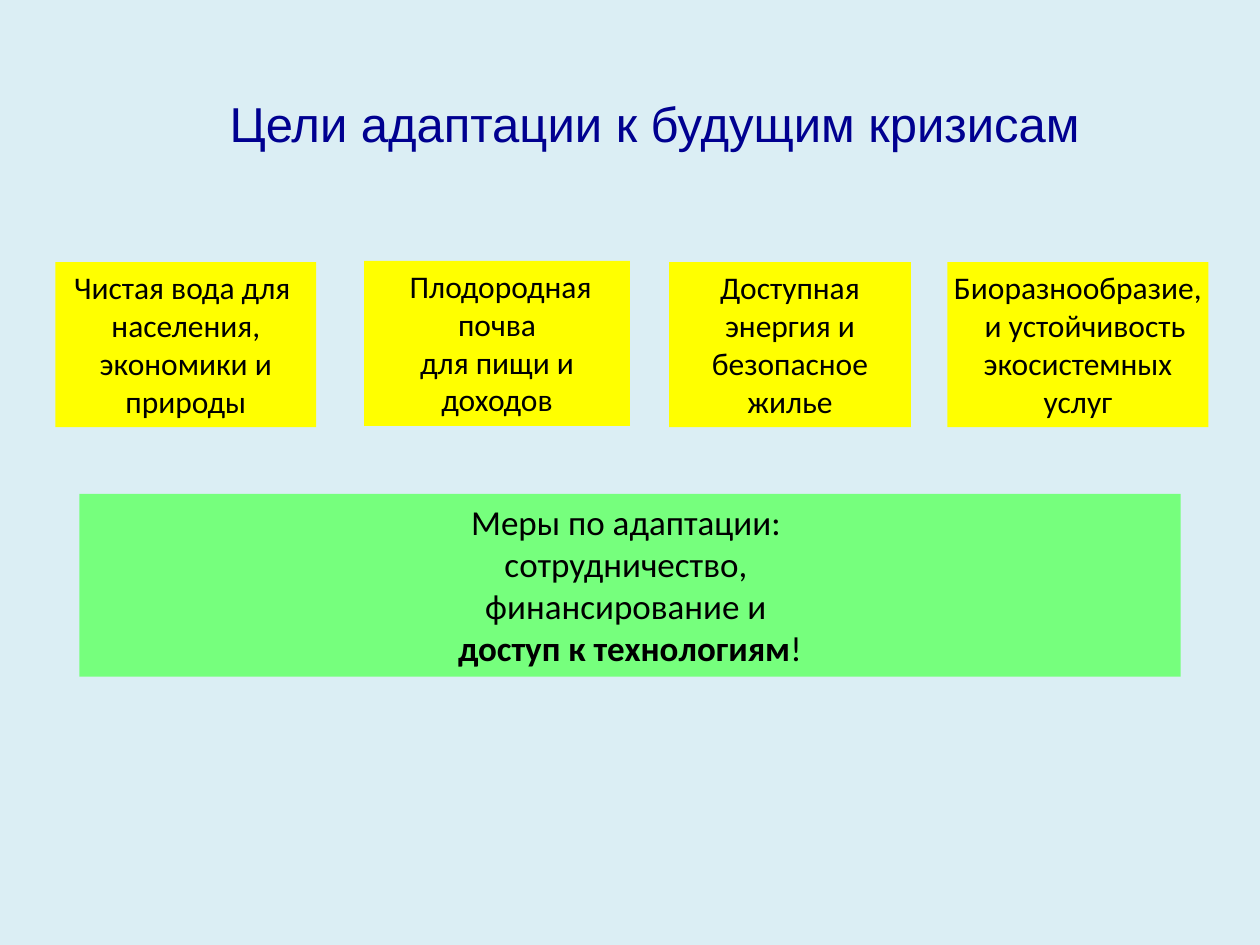
from pptx import Presentation, util as u
from pptx.dml.color import RGBColor
from pptx.enum import shapes, text

# Content: paragraphs are lists of (text, bold) runs
TITLE = "Цели адаптации к будущим кризисам"
GOALS = [  # left, top, width, paragraphs
    (0.44, 2.08, 2.07, ["Чистая вода для ", "населения, экономики и природы"]),
    (2.89, 2.07, 2.11, [" Плодородная почва", "для пищи и доходов"]),
    (5.31, 2.08, 1.92, ["Доступная энергия и безопасное жилье"]),
    (7.52, 2.08, 2.07, ["Биоразнообразие,   и устойчивость", "экосистемных услуг"]),
]
GOAL_HEIGHT = 1.31
MEASURES = [
    [("Меры по адаптации: ", False)],
    [("сотрудничество, ", False)],
    [("финансирование и ", False)],
    [("доступ к технологиям", True), ("!", False)],
]
COLORS = {"bg": "DBEEF4", "goal": "FFFF00", "measures": "76FF7D",
          "title": "000090", "text": "000000"}
FRAME = {"word_wrap": True, "vertical_anchor": text.MSO_ANCHOR.TOP,
         "auto_size": text.MSO_AUTO_SIZE.NONE,
         **{f"margin_{side}": u.Inches(0.05) for side in ("left", "top", "right", "bottom")}}


def rgb(name):
    return RGBColor.from_string(COLORS[name])


def write(sp, paragraphs, size, font="Calibri", color="text"):
    tf = sp.text_frame
    for key, value in FRAME.items():
        setattr(tf, key, value)
    for i, runs in enumerate(paragraphs):
        p = tf.add_paragraph() if i else tf.paragraphs[0]
        for key, value in {"alignment": text.PP_ALIGN.CENTER, "line_spacing": 1.0,
                           "space_before": u.Pt(0)}.items():
            setattr(p, key, value)
        for words, bold in runs:
            r = p.add_run()
            r.text = words
            for key, value in {"name": font, "size": u.Pt(size), "bold": bold}.items():
                setattr(r.font, key, value)
            r.font.color.rgb = rgb(color)


def add_box(s, box, fill, paragraphs, size):
    sp = s.shapes.add_shape(shapes.MSO_SHAPE.RECTANGLE, *map(u.Inches, box))
    sp.shadow.inherit = False
    sp.fill.solid()
    sp.fill.fore_color.rgb = rgb(fill)
    sp.line.fill.background()
    write(sp, paragraphs, size)


def main():
    prs = Presentation()
    prs.slide_width, prs.slide_height = u.Inches(10), u.Inches(7.5)
    s = prs.slides.add_slide(prs.slide_layouts[5])
    s.background.fill.solid()
    s.background.fill.fore_color.rgb = rgb("bg")

    # Title
    title = s.shapes.title
    for key, value in zip(("left", "top", "width", "height"), (0.6, 0.69, 9.19, 0.57)):
        setattr(title, key, u.Inches(value))
    write(title, [[(TITLE, False)]], 28, "Arial", "title")

    # Row of goals
    for left, top, width, lines in GOALS:
        add_box(s, (left, top, width, GOAL_HEIGHT), "goal",
                [[(line, False)] for line in lines], 18)

    # Adaptation measures
    add_box(s, (0.63, 3.92, 8.74, 1.45), "measures", MEASURES, 20)

    prs.save("out.pptx")


if __name__ == "__main__":
    main()
